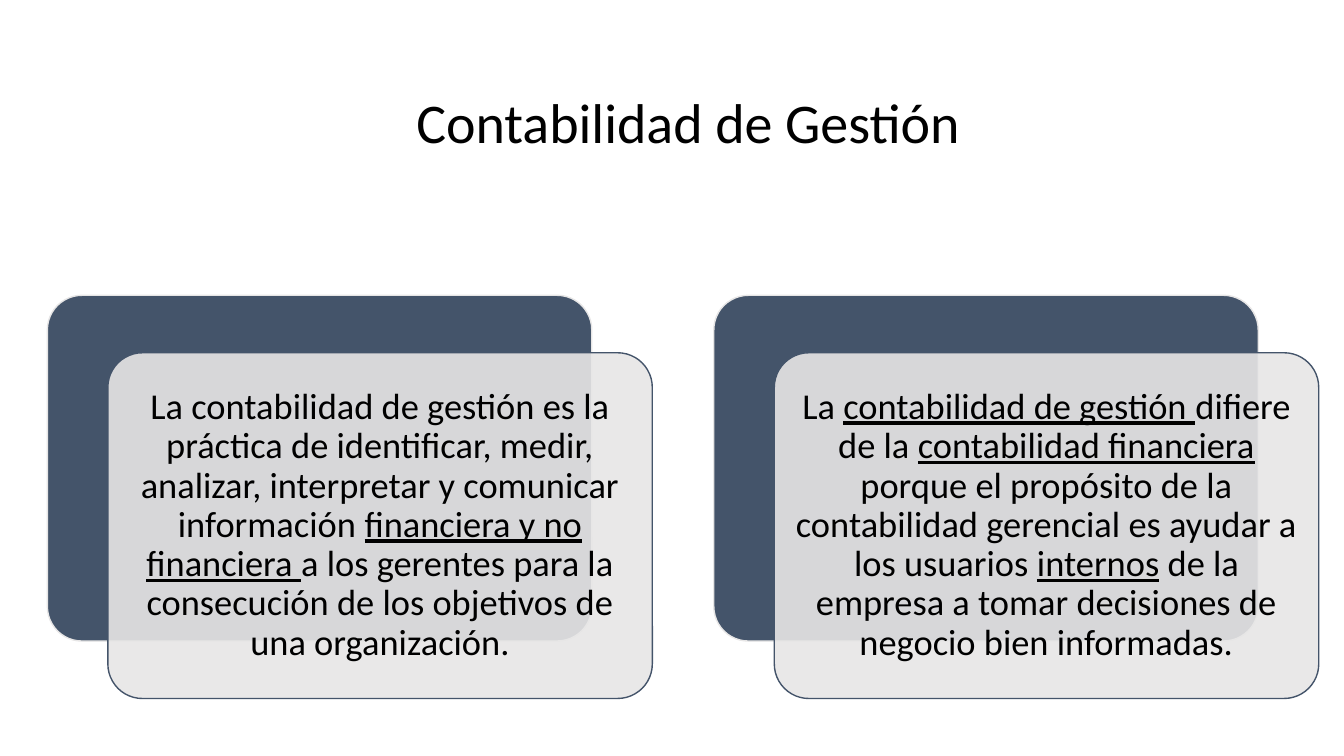
from dataclasses import dataclass

from lxml import etree
from pptx import Presentation
from pptx import util as u
from pptx.dml.color import RGBColor
from pptx.enum import shapes, text
from pptx.oxml.ns import qn

BLACK = RGBColor(0x00, 0x00, 0x00)
SLATE = RGBColor(0x44, 0x54, 0x6A)
LIGHT_GRAY = RGBColor(0xE7, 0xE6, 0xE6)
FONT = "Calibri"
PANEL_WIDTH, PANEL_HEIGHT = 5.4, 3.43
FRONT_SHIFT_X, FRONT_SHIFT_Y = 0.6, 0.57
TEXT_MARGIN = 0.1
TEXT_INSET = 0.11
FIRST_LEFT, CARD_TOP, CARD_PITCH = 0.47, 2.93, 6.61


@dataclass(frozen=True)
class Phrase:
    words: str
    underlined: bool = False


@dataclass(frozen=True)
class Card:
    phrases: tuple[Phrase, ...]


CARDS = (
    Card((
        Phrase("La contabilidad de gestión es la práctica de identificar, medir, "
               "analizar, interpretar y comunicar información "),
        Phrase("financiera y no financiera ", True),
        Phrase("a los gerentes para la consecución de los objetivos de una organización."),
    )),
    Card((
        Phrase("La "),
        Phrase("contabilidad de gestión ", True),
        Phrase("difiere de la "),
        Phrase("contabilidad financiera ", True),
        Phrase("porque el propósito de la contabilidad gerencial es ayudar a los usuarios "),
        Phrase("internos", True),
        Phrase(" de la empresa a tomar decisiones de negocio bien informadas."),
    )),
)


def write_paragraph(frame, phrases: tuple[Phrase, ...], size: float) -> None:
    frame.word_wrap = True
    frame.auto_size = text.MSO_AUTO_SIZE.NONE
    frame.vertical_anchor = text.MSO_ANCHOR.MIDDLE
    paragraph = frame.paragraphs[0]
    paragraph.alignment = text.PP_ALIGN.CENTER
    paragraph.line_spacing = 0.9
    for phrase in phrases:
        run = paragraph.add_run()
        run.text = phrase.words
        run.font.name = FONT
        run.font.size = u.Pt(size)
        run.font.color.rgb = BLACK
        if phrase.underlined:
            run.font.underline = True


def draw_panel(slide, left: float, top: float, fill: RGBColor, outline: RGBColor,
               opacity: int = 100) -> None:
    panel = slide.shapes.add_shape(
        shapes.MSO_SHAPE.ROUNDED_RECTANGLE, u.Inches(left), u.Inches(top),
        u.Inches(PANEL_WIDTH), u.Inches(PANEL_HEIGHT))
    panel.adjustments[0] = 0.1
    panel.shadow.inherit = False
    panel.fill.solid()
    panel.fill.fore_color.rgb = fill
    panel.line.color.rgb = outline
    panel.line.width = u.Pt(1)
    if opacity < 100:
        color = panel.fill._xPr.find(qn("a:solidFill"))[0]
        etree.SubElement(color, qn("a:alpha")).set("val", str(opacity * 1000))


def draw_card(slide, card: Card, left: float) -> None:
    front_left, front_top = left + FRONT_SHIFT_X, CARD_TOP + FRONT_SHIFT_Y
    draw_panel(slide, left, CARD_TOP, SLATE, LIGHT_GRAY)
    draw_panel(slide, front_left, front_top, LIGHT_GRAY, SLATE, opacity=90)
    statement = slide.shapes.add_textbox(
        u.Inches(front_left + TEXT_MARGIN), u.Inches(front_top + TEXT_MARGIN),
        u.Inches(PANEL_WIDTH - 2 * TEXT_MARGIN), u.Inches(PANEL_HEIGHT - 2 * TEXT_MARGIN))
    frame = statement.text_frame
    frame.margin_left = frame.margin_right = u.Inches(TEXT_INSET)
    frame.margin_top = frame.margin_bottom = u.Inches(TEXT_INSET)
    write_paragraph(frame, card.phrases, 26)


def main() -> None:
    deck = Presentation()
    deck.slide_width, deck.slide_height = u.Inches(13.33), u.Inches(7.5)
    slide = deck.slides.add_slide(deck.slide_layouts[5])
    heading = slide.shapes.title
    heading.left, heading.top = u.Inches(1.51), u.Inches(0.38)
    heading.width, heading.height = u.Inches(10.63), u.Inches(1.72)
    write_paragraph(heading.text_frame, (Phrase("Contabilidad de Gestión"),), 40)
    for index, card in enumerate(CARDS):
        draw_card(slide, card, FIRST_LEFT + index * CARD_PITCH)
    deck.save("out.pptx")


if __name__ == "__main__":
    main()
